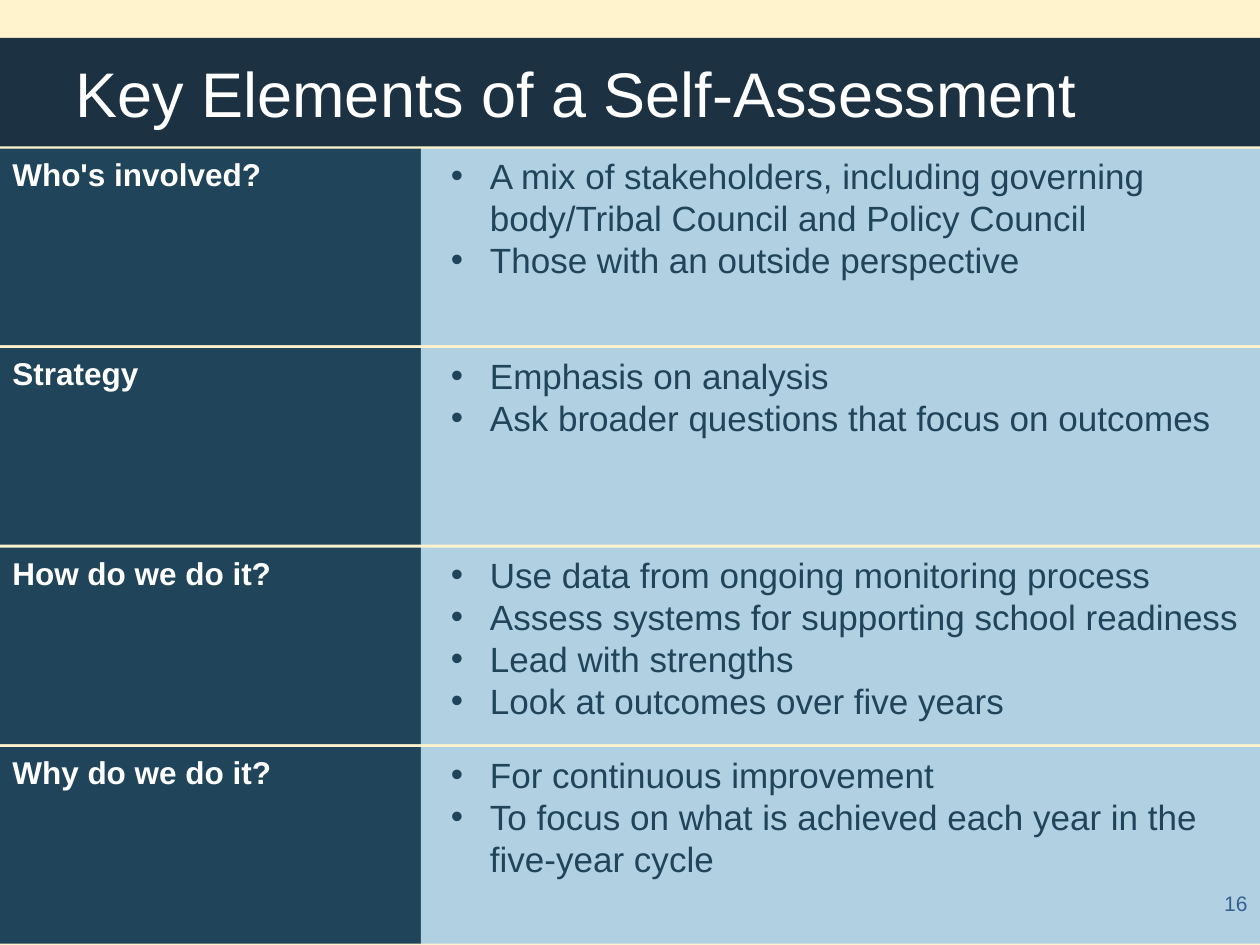
from lxml.etree import SubElement
from pptx import Presentation
from pptx.dml.color import RGBColor
from pptx.enum.shapes import MSO_SHAPE
from pptx.enum.text import MSO_ANCHOR, PP_ALIGN
from pptx.oxml.ns import qn
from pptx.util import Inches, Pt

COLORS = {"page": "FFF3CD", "banner": "1C3141", "label": "20455A",
          "answer": "B1D1E3", "white": "FFFFFF", "number": "376092"}
WIDTH, HEIGHT = Inches(10), Inches(7.5)
SPLIT = 0.334 * WIDTH
FIRST_ROW, ROW_PITCH, ROW_HEIGHT = Inches(1.18), Inches(1.583), Inches(1.56)

# Each row: question, then its answers; a newline is a forced line break.
ROWS = [
    ("Who's involved?", [
        "A mix of stakeholders, including governing body/Tribal Council and Policy Council",
        "Those with an outside perspective"]),
    ("Strategy", [
        "Emphasis on analysis",
        "Ask broader questions that focus on outcomes"]),
    ("How do we do it?", [
        "Use data from ongoing monitoring process",
        "Assess systems for supporting school readiness",
        "Lead with strengths",
        "Look at outcomes over five years"]),
    ("Why do we do it?", [
        "For continuous improvement",
        "To focus on what is achieved each year in the\nfive-year cycle"]),
]


def paint(fill, color):
    fill.solid()
    fill.fore_color.rgb = RGBColor.from_string(COLORS[color])


def place(shape, left, top, width, height):
    shape.left, shape.top = int(left), int(top)
    shape.width, shape.height = int(width), int(height)


def write(para, text, size, color, bold=False):
    for index, line in enumerate(text.split("\n")):
        if index:
            para.add_line_break()
        span = para.add_run()
        span.text = line
        span.font.name, span.font.size, span.font.bold = "Arial", Pt(size), bold
        span.font.color.rgb = RGBColor.from_string(COLORS[color])


def indent(para, margin, first_line):
    properties = para._p.get_or_add_pPr()
    properties.set("marL", str(Inches(margin)))
    properties.set("indent", str(Inches(first_line)))
    return properties


def add_bullet(para, color):
    properties = indent(para, 0.45, -0.31)
    bullet_color = SubElement(properties, qn("a:buClr"))
    SubElement(bullet_color, qn("a:srgbClr")).set("val", COLORS[color])
    SubElement(properties, qn("a:buFont")).set("typeface", "Arial")
    SubElement(properties, qn("a:buChar")).set("char", "•")


def add_title(page, text):
    title = page.shapes.title
    place(title, 0, 0.04 * HEIGHT, WIDTH, 0.115 * HEIGHT)
    paint(title.fill, "banner")
    title.text_frame.vertical_anchor = MSO_ANCHOR.MIDDLE
    para = title.text_frame.paragraphs[0]
    para.alignment = PP_ALIGN.LEFT
    indent(para, 0, 0.5)
    write(para, text, 36, "white")


def add_panel(page, left, top, width, color):
    """Add a plain filled rectangle and return its text frame."""
    panel = page.shapes.add_shape(MSO_SHAPE.RECTANGLE, 0, 0, 0, 0)
    place(panel, left, top, width, ROW_HEIGHT)
    panel.shadow.inherit = False
    paint(panel.fill, color)
    panel.line.fill.background()
    frame = panel.text_frame
    frame.word_wrap = True
    frame.vertical_anchor = MSO_ANCHOR.TOP
    return frame


def add_row(page, index, question, answers):
    top = FIRST_ROW + index * ROW_PITCH
    label = add_panel(page, 0, top, SPLIT, "label").paragraphs[0]
    label.alignment = PP_ALIGN.LEFT
    write(label, question, 18, "white", bold=True)

    frame = add_panel(page, SPLIT, top, WIDTH - SPLIT, "answer")
    for number, answer in enumerate(answers):
        para = frame.add_paragraph() if number else frame.paragraphs[0]
        add_bullet(para, "label")
        para.alignment = PP_ALIGN.LEFT
        para.line_spacing = Pt(24)
        write(para, answer, 20, "label")


def add_page_number(page, text):
    box = page.shapes.add_textbox(0, 0, 0, 0)
    place(box, 0.92 * WIDTH, Inches(7.02), 0.08 * WIDTH, Inches(0.4))
    box.text_frame.word_wrap = True
    para = box.text_frame.paragraphs[0]
    para.alignment = PP_ALIGN.RIGHT
    write(para, text, 12, "number")


def main():
    deck = Presentation()
    deck.slide_width, deck.slide_height = WIDTH, HEIGHT
    page = deck.slides.add_slide(deck.slide_layouts[5])
    paint(page.background.fill, "page")
    add_title(page, "Key Elements of a Self-Assessment")
    for index, (question, answers) in enumerate(ROWS):
        add_row(page, index, question, answers)
    add_page_number(page, "16")
    deck.save("out.pptx")


if __name__ == "__main__":
    main()
